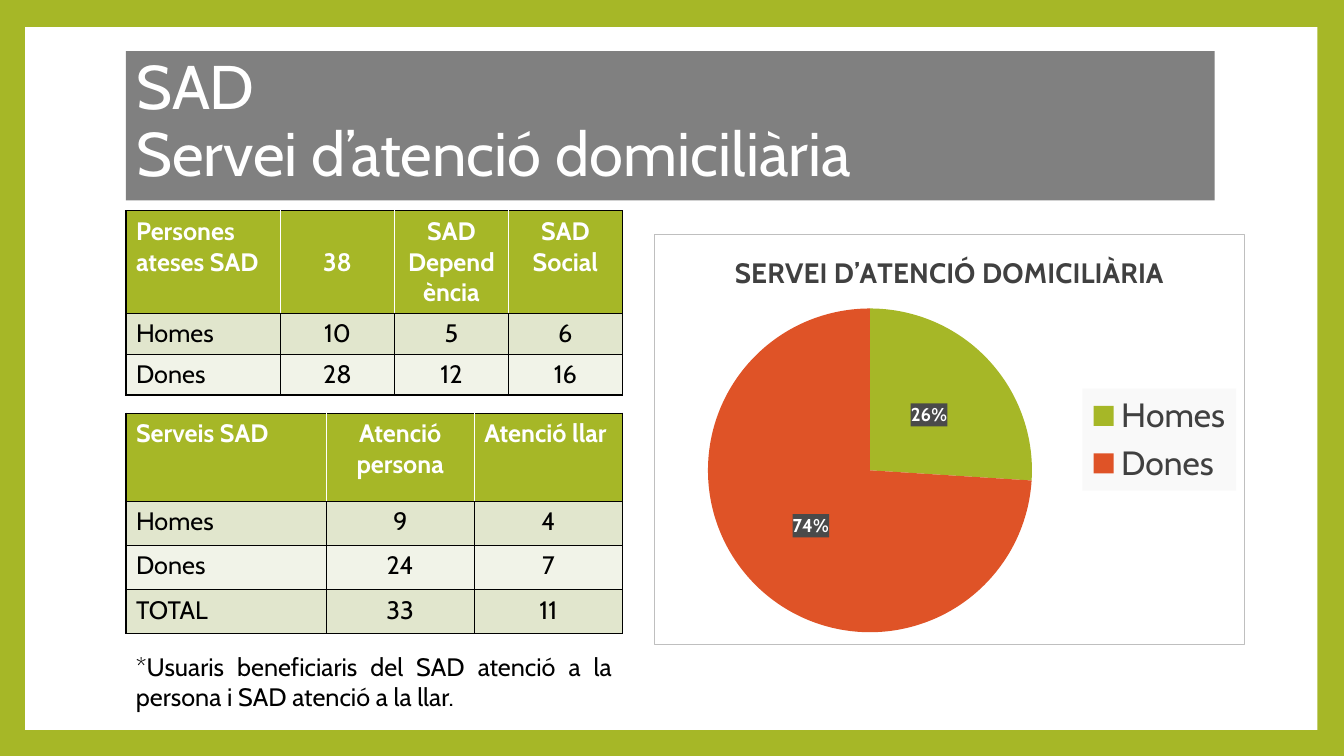
from lxml import etree
from pptx import Presentation
from pptx.chart.data import CategoryChartData
from pptx.dml.color import RGBColor
from pptx.enum.chart import XL_CHART_TYPE, XL_LABEL_POSITION, XL_LEGEND_POSITION
from pptx.enum.shapes import MSO_SHAPE
from pptx.enum.text import MSO_ANCHOR, MSO_AUTO_SIZE, PP_ALIGN
from pptx.oxml.ns import qn
from pptx.util import Pt

PIE = XL_CHART_TYPE.PIE
LABEL_CENTER = XL_LABEL_POSITION.CENTER
LEGEND_RIGHT = XL_LEGEND_POSITION.RIGHT
RECTANGLE = MSO_SHAPE.RECTANGLE
MIDDLE, TOP = MSO_ANCHOR.MIDDLE, MSO_ANCHOR.TOP
NO_AUTOFIT = MSO_AUTO_SIZE.NONE
LEFT, CENTER, JUSTIFY = PP_ALIGN.LEFT, PP_ALIGN.CENTER, PP_ALIGN.JUSTIFY

TITLE_LINES = ["SAD", "Servei d’atenció domiciliària"]
NOTE = "*Usuaris beneficiaris del SAD atenció a la persona i SAD atenció a la llar."
TABLES = [
    {
        "rows": [
            ["Persones ateses SAD", "38", "SAD Dependència", "SAD Social"],
            ["Homes", "10", "5", "6"],
            ["Dones", "28", "12", "16"],
        ],
        "top": 150.6, "first_width": 110.4, "heights": (73, 29.2),
        "middle_header": 1, "left_header": None,
    },
    {
        "rows": [
            ["Serveis SAD", "Atenció persona", "Atenció llar"],
            ["Homes", "9", "4"],
            ["Dones", "24", "7"],
            ["TOTAL", "33", "11"],
        ],
        "top": 295.2, "first_width": 143, "heights": (62.8, 31.6),
        "middle_header": None, "left_header": 2,
    },
]
CHART_TITLE = "SERVEI D’ATENCIÓ DOMICILIÀRIA"
SHARES = {"Homes": 26, "Dones": 74}

THEME = {
    "font": "Cabin",
    "green": "A6B727", "orange": "DF5327", "gray": "808080",
    "white": "FFFFFF", "black": "000000", "bands": ("E1E6CD", "F1F3E8"),
    "chart_text": "404040", "chart_border": "BFBFBF",
    "legend_fill": "F9F9F9", "label_fill": "4A4A4A",
    "title": 44, "body": 18, "chart_title": 20,
    "legend": 24, "label": 13.3, "chart": 10,
}

SLIDE_SIZE = (960, 540)
PANEL_BOX = (18, 19.4, 923, 502)
TITLE_BOX = (90, 36.6, 777.6, 106.6)
NOTE_BOX = (90, 461.5, 354.2, 51.1)
CHART_BOX = (467.3, 167.3, 422, 293.5)
PIE_LAYOUT = {"x": 0.09, "y": 0.18, "w": 0.55, "h": 0.79}
TABLE_LEFT, TABLE_WIDTH = 90, 354.6


def points(box):
    return [Pt(value) for value in box]


def style_font(font, size, color, bold=False):
    values = {"name": THEME["font"], "size": Pt(size), "bold": bold}
    for name, value in values.items():
        setattr(font, name, value)
    font.color.rgb = RGBColor.from_string(color)


def fill_solid(part, color):
    part.fill.solid()
    part.fill.fore_color.rgb = RGBColor.from_string(color)


def add_solid(parent, color):
    solid = etree.SubElement(parent, qn("a:solidFill"))
    etree.SubElement(solid, qn("a:srgbClr"), val=color)


def border_cell(cell, colors):
    properties = cell._tc.get_or_add_tcPr()
    for index, side in enumerate("LRTB"):
        line = etree.Element(qn(f"a:ln{side}"), w=str(Pt(1)))
        add_solid(line, colors[side])
        properties.insert(index, line)


def add_service_table(slide, content):
    rows = content["rows"]
    header_height, row_height = content["heights"]
    heights = [header_height] + [row_height] * (len(rows) - 1)
    last = len(rows[0]) - 1
    other_width = (TABLE_WIDTH - content["first_width"]) / last
    box = points((TABLE_LEFT, content["top"], TABLE_WIDTH, sum(heights)))
    table = slide.shapes.add_table(len(rows), last + 1, *box).table
    for column, grid_column in enumerate(table.columns):
        grid_column.width = Pt(other_width if column else content["first_width"])
    for row, words in enumerate(rows):
        table.rows[row].height = Pt(heights[row])
        header = row == 0
        for column, word in enumerate(words):
            cell = table.cell(row, column)
            cell.text = word
            centered = column > 0 and not (header and column == content["left_header"])
            paragraph = cell.text_frame.paragraphs[0]
            paragraph.alignment = CENTER if centered else LEFT
            style_font(paragraph.runs[0].font, THEME["body"],
                       THEME["white"] if header else THEME["black"], header)
            in_middle = header and column == content["middle_header"]
            cell.vertical_anchor = MIDDLE if in_middle else TOP
            fill_solid(cell, THEME["green"] if header else THEME["bands"][(row - 1) % 2])
            colors = dict.fromkeys("LRTB", THEME["black"])
            if header and column > 0:
                colors["L"] = THEME["white"]
            if header and column < last:
                colors["R"] = THEME["white"]
            border_cell(cell, colors)


def paint_chart_part(element, color, border=None):
    paint = etree.Element(qn("c:spPr"))
    add_solid(paint, color)
    if border:
        add_solid(etree.SubElement(paint, qn("a:ln"), w=str(Pt(0.75))), border)
    element.find(qn("c:txPr")).addprevious(paint)


def place_pie(plot_area):
    for old_layout in plot_area.findall(qn("c:layout")):
        plot_area.remove(old_layout)
    layout = etree.Element(qn("c:layout"))
    manual = etree.SubElement(layout, qn("c:manualLayout"))
    settings = {"layoutTarget": "inner", "xMode": "edge", "yMode": "edge", **PIE_LAYOUT}
    for name, value in settings.items():
        etree.SubElement(manual, qn(f"c:{name}"), val=str(value))
    plot_area.insert(0, layout)


def add_share_chart(slide):
    shares = CategoryChartData()
    shares.categories = list(SHARES)
    shares.add_series("Series 1", list(SHARES.values()))
    chart = slide.shapes.add_chart(PIE, *points(CHART_BOX), shares).chart
    style_font(chart.font, THEME["chart"], THEME["black"])
    chart.has_title = True
    chart.chart_title.include_in_layout = False
    heading = chart.chart_title.text_frame
    heading.text = CHART_TITLE
    heading.word_wrap = False
    style_font(heading.paragraphs[0].runs[0].font, THEME["chart_title"],
               THEME["chart_text"], True)
    chart.has_legend = True
    chart.legend.position = LEGEND_RIGHT
    chart.legend.include_in_layout = False
    style_font(chart.legend.font, THEME["legend"], THEME["chart_text"])

    pie = chart.plots[0]
    pie.vary_by_categories = True
    for index, color in enumerate((THEME["green"], THEME["orange"])):
        fill_solid(pie.series[0].points[index].format, color)
    labels = pie.series[0].data_labels
    label_settings = {
        "show_percentage": True, "show_value": False, "show_legend_key": False,
        "number_format": "0%", "number_format_is_linked": False,
        "position": LABEL_CENTER,
    }
    for name, value in label_settings.items():
        setattr(labels, name, value)
    style_font(labels.font, THEME["label"], THEME["white"], True)

    root = chart.element
    paint_chart_part(root, THEME["white"], THEME["chart_border"])
    paint_chart_part(next(root.iter(qn("c:legend"))), THEME["legend_fill"])
    paint_chart_part(next(root.iter(qn("c:dLbls"))), THEME["label_fill"])
    place_pie(next(root.iter(qn("c:plotArea"))))


def main():
    presentation = Presentation()
    presentation.slide_width, presentation.slide_height = points(SLIDE_SIZE)
    slide = presentation.slides.add_slide(presentation.slide_layouts[5])
    fill_solid(slide.background, THEME["green"])

    panel = slide.shapes.add_shape(RECTANGLE, *points(PANEL_BOX))
    panel.shadow.inherit = False
    fill_solid(panel, THEME["white"])
    panel.line.fill.background()
    slide.shapes[0]._element.addprevious(panel._element)

    title = slide.shapes.title
    title.left, title.top, title.width, title.height = points(TITLE_BOX)
    fill_solid(title, THEME["gray"])
    title.text_frame.text = "\n".join(TITLE_LINES)
    title.text_frame.auto_size = NO_AUTOFIT
    title.text_frame.vertical_anchor = MIDDLE
    title.text_frame.margin_bottom = Pt(8)
    for paragraph in title.text_frame.paragraphs:
        paragraph.alignment = LEFT
        paragraph.line_spacing = 0.9
        paragraph.space_before = Pt(0)
        style_font(paragraph.runs[0].font, THEME["title"], THEME["white"])

    for content in TABLES:
        add_service_table(slide, content)
    add_share_chart(slide)

    note = slide.shapes.add_textbox(*points(NOTE_BOX)).text_frame
    note.word_wrap = True
    note.text = NOTE
    note.paragraphs[0].alignment = JUSTIFY
    style_font(note.paragraphs[0].runs[0].font, THEME["body"], THEME["black"])
    presentation.save("out.pptx")


if __name__ == "__main__":
    main()
